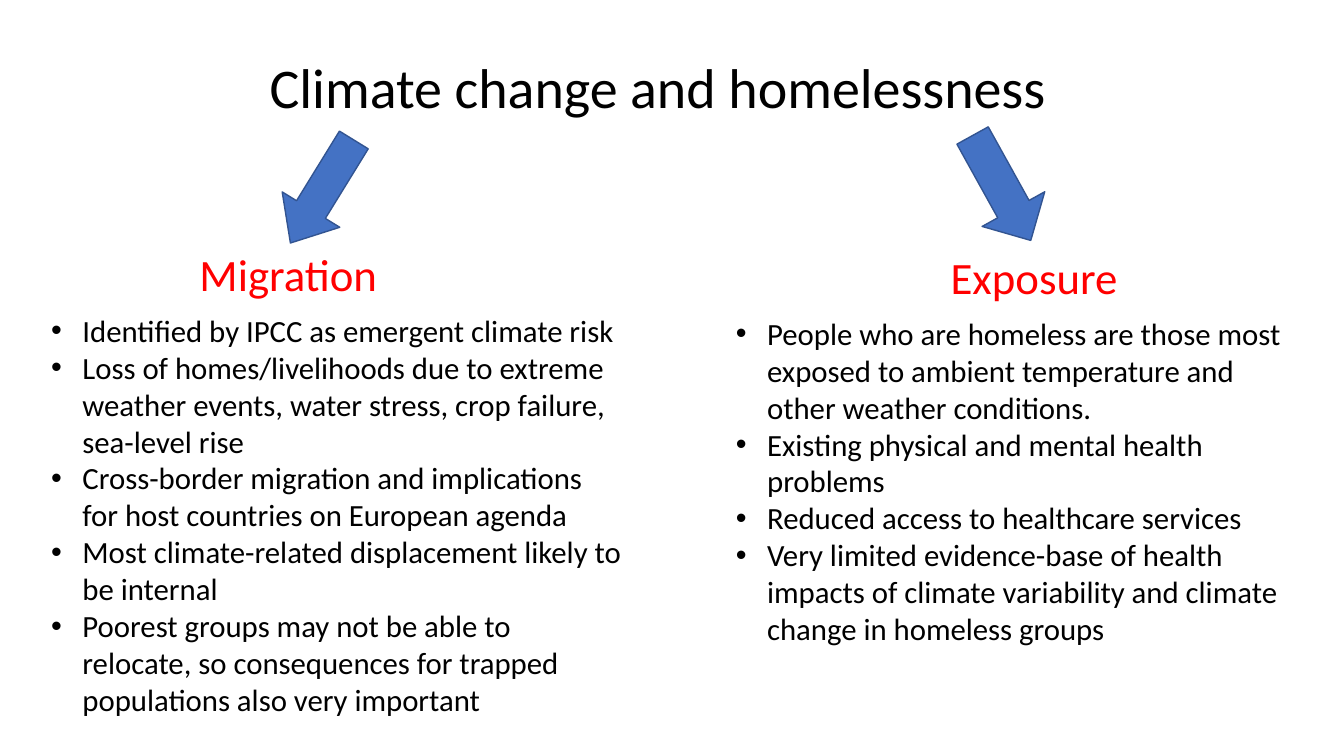
"""Build the slide on climate change and homelessness."""
from dataclasses import dataclass

import lxml.etree
import pptx
import pptx.dml.color
import pptx.enum.shapes
import pptx.enum.text
import pptx.oxml.ns
import pptx.slide
import pptx.text.text
import pptx.util

EMU_PER_PX = 9144
BULLET_INDENT = 31


@dataclass(frozen=True)
class Theme:
    font: str = "Calibri"
    bullet_font: str = "Arial"
    text: str = "000000"
    heading: str = "FF0000"
    arrow_fill: str = "4472C4"
    arrow_line: str = "325491"
    title_size: int = 40
    heading_size: int = 32
    body_size: int = 22
    arrow_line_width: int = 1


@dataclass(frozen=True)
class Area:
    left: int
    top: int
    width: int
    height: int

    def emu(self) -> tuple[pptx.util.Emu, ...]:
        return tuple(map(px, (self.left, self.top, self.width, self.height)))


@dataclass(frozen=True)
class Arrow:
    area: Area
    rotation: float
    head: float


@dataclass(frozen=True)
class Topic:
    heading: str
    heading_area: Area
    arrow: Arrow
    points_area: Area
    points: tuple[str, ...]


THEME = Theme()
TITLE = "Climate change and homelessness "
TITLE_AREA = Area(157, 47, 1003, 77)
TOPICS = (
    Topic(
        "Migration",
        Area(188, 240, 222, 64),
        Arrow(Area(286, 130, 67, 120), 31.6, 0.58),
        Area(41, 304, 586, 417),
        (
            "Identified by IPCC as emergent climate risk",
            "Loss of homes/livelihoods due to extreme weather events, water stress, crop failure, sea-level rise",
            "Cross-border migration and implications for host countries on European agenda",
            "Most climate-related displacement likely to be internal",
            "Poorest groups may not be able to relocate, so consequences for trapped populations also very important",
        ),
    ),
    Topic(
        "Exposure",
        Area(933, 243, 237, 64),
        Arrow(Area(958, 127, 71, 119), 331, 0.5),
        Area(720, 307, 572, 343),
        (
            "People who are homeless are those most exposed to ambient temperature and other weather conditions.",
            "Existing physical and mental health problems",
            "Reduced access to healthcare services",
            "Very limited evidence-base of health impacts of climate variability and climate change in homeless groups",
        ),
    ),
)


def px(length: int) -> pptx.util.Emu:
    return pptx.util.Emu(length * EMU_PER_PX)


def rgb(value: str) -> pptx.dml.color.RGBColor:
    return pptx.dml.color.RGBColor.from_string(value)


def add_bullet(para: pptx.text.text._Paragraph) -> None:
    properties = para._p.get_or_add_pPr()
    properties.set("marL", str(px(BULLET_INDENT)))
    properties.set("indent", str(px(-BULLET_INDENT)))
    qn = pptx.oxml.ns.qn
    lxml.etree.SubElement(properties, qn("a:buFont"), typeface=THEME.bullet_font)
    lxml.etree.SubElement(properties, qn("a:buChar"), char="•")


def add_text(
    page: pptx.slide.Slide,
    area: Area,
    lines: tuple[str, ...],
    size: int,
    color: str = THEME.text,
    centred: bool = False,
    bulleted: bool = False,
) -> None:
    frame = page.shapes.add_textbox(*area.emu()).text_frame
    frame.word_wrap = True
    frame.auto_size = pptx.enum.text.MSO_AUTO_SIZE.SHAPE_TO_FIT_TEXT
    for index, line in enumerate(lines):
        para = frame.add_paragraph() if index else frame.paragraphs[0]
        para.text = line
        if centred:
            para.alignment = pptx.enum.text.PP_ALIGN.CENTER
        if bulleted:
            add_bullet(para)
        para.font.name = THEME.font
        para.font.size = pptx.util.Pt(size)
        para.font.color.rgb = rgb(color)


def add_arrow(page: pptx.slide.Slide, arrow: Arrow) -> None:
    shape = page.shapes.add_shape(
        pptx.enum.shapes.MSO_SHAPE.DOWN_ARROW, *arrow.area.emu()
    )
    shape.adjustments[1] = arrow.head
    shape.rotation = arrow.rotation
    shape.shadow.inherit = False
    shape.fill.solid()
    shape.fill.fore_color.rgb = rgb(THEME.arrow_fill)
    shape.line.color.rgb = rgb(THEME.arrow_line)
    shape.line.width = pptx.util.Pt(THEME.arrow_line_width)


def add_topic(page: pptx.slide.Slide, topic: Topic) -> None:
    add_text(
        page, topic.heading_area, (topic.heading,), THEME.heading_size, THEME.heading
    )
    add_arrow(page, topic.arrow)
    add_text(page, topic.points_area, topic.points, THEME.body_size, bulleted=True)


def main() -> None:
    deck = pptx.Presentation()
    deck.slide_width, deck.slide_height = px(1333), px(750)
    page = deck.slides.add_slide(deck.slide_layouts[6])
    add_text(page, TITLE_AREA, (TITLE,), THEME.title_size, centred=True)
    for topic in TOPICS:
        add_topic(page, topic)
    deck.save("out.pptx")


if __name__ == "__main__":
    main()
